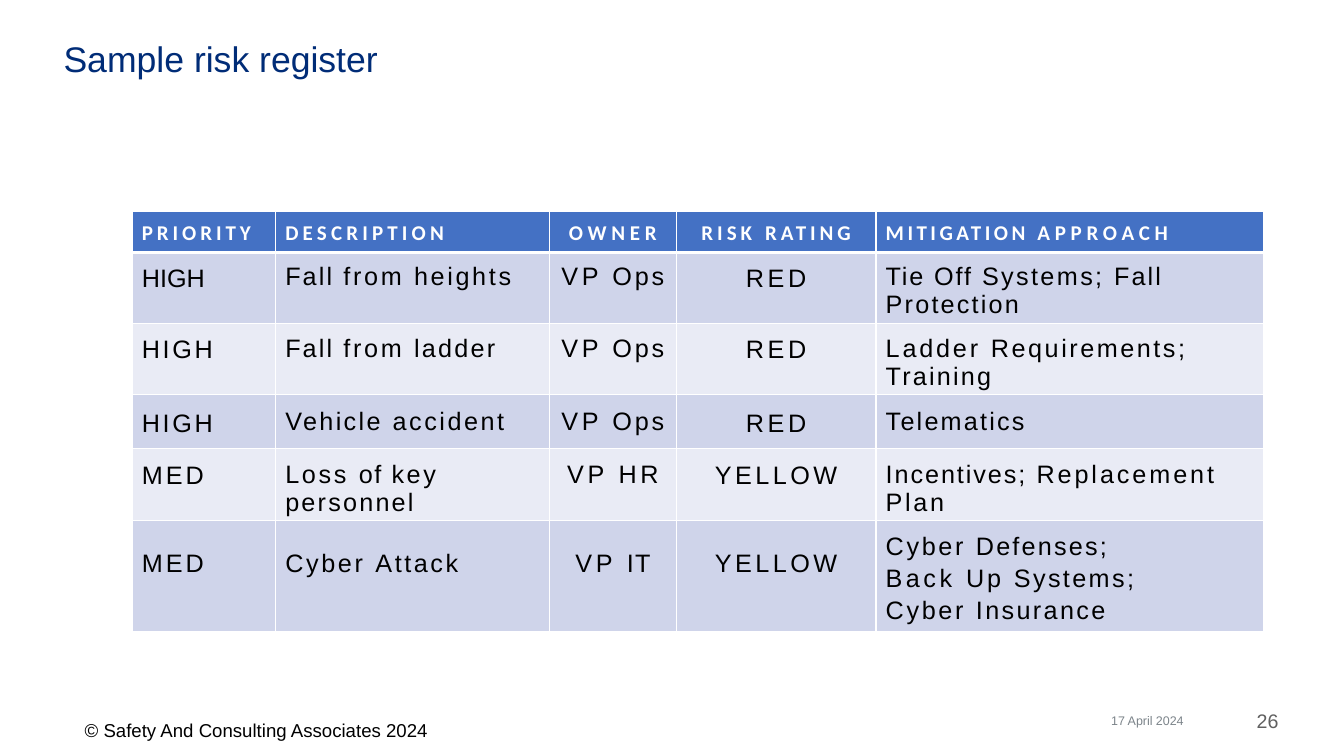
from dataclasses import dataclass

from pptx import Presentation
from pptx import util as u
from pptx.dml.color import RGBColor
from pptx.enum import text
from pptx.oxml import parse_xml
from pptx.oxml.ns import nsdecls

NAVY = RGBColor(0x00, 0x2C, 0x77)
BLUE = RGBColor(0x44, 0x71, 0xC4)
LAVENDER = RGBColor(0xCF, 0xD4, 0xEA)
PALE = RGBColor(0xE9, 0xEB, 0xF5)
WHITE = RGBColor(0xFF, 0xFF, 0xFF)
BLACK = RGBColor(0x00, 0x00, 0x00)
GREY = RGBColor(0x60, 0x60, 0x60)
SLATE = RGBColor(0x7C, 0x84, 0x8A)

SLIDE_W, SLIDE_H = u.Inches(13.33), u.Inches(7.5)
LEFT, CENTER, RIGHT = text.PP_ALIGN.LEFT, text.PP_ALIGN.CENTER, text.PP_ALIGN.RIGHT
TOP, BOTTOM = text.MSO_ANCHOR.TOP, text.MSO_ANCHOR.BOTTOM

Tracked = tuple[tuple[str, float], ...]  # pieces of text with their tracking in points


@dataclass(frozen=True)
class Box:
    """Place and size in percent of the slide's width and height."""
    left: float
    top: float
    width: float
    height: float


@dataclass(frozen=True)
class Style:
    size: float
    color: RGBColor
    font: str = "Arial"
    bold: bool = False
    align: text.PP_ALIGN = LEFT


@dataclass(frozen=True)
class Note:
    words: str
    box: Box
    style: Style
    anchor: text.MSO_ANCHOR = BOTTOM
    wrap: bool = True


@dataclass(frozen=True)
class Column:
    width: float
    align: text.PP_ALIGN = LEFT
    drop: float = 0  # extra points above the text


@dataclass(frozen=True)
class Row:
    """Height in percent of the slide, inset above the text in points."""
    height: float
    inset: float
    fill: RGBColor
    cells: tuple[Tracked, ...]


TITLE = Note("Sample risk register", Box(4.73, 5.6, 90.47, 11.07),
             Style(25.4, NAVY), TOP)
NOTES = (
    Note("© Safety And Consulting Associates 2024", Box(6.3, 95.07, 25.8, 2.93),
         Style(13.3, BLACK), TOP, False),
    Note("26", Box(88.9, 93.73, 6.23, 3.2), Style(14, GREY, align=RIGHT)),
    Note("17 April 2024", Box(82.67, 94.27, 10.73, 2), Style(8.9, SLATE)),
)
COLUMNS = (Column(10.67, LEFT, 1.2), Column(20.38), Column(9.45, CENTER),
           Column(14.85, CENTER, 1.2), Column(28.85))
HIGH, MED = (("HIGH", 1.9),), (("MED", 2.1),)
RED, YELLOW = (("RED", 2.6),), (("YELLOW", 2.5),)
VP_OPS = (("VP ", 2.6), ("Ops", 2))
HEADER = Row(5.41, 6, BLUE, (
    (("PRIORITY", 2.8),), (("DESCRIPTION", 3),), (("OWNER", 3.4),),
    (("RISK ", 2.9), ("RATING", 2.8)), (("MITIGATION ", 2.5), ("APPROACH", 3.4))))
RISKS = (
    Row(9.38, 7.3, LAVENDER, (
        (("HIGH", 0),), (("Fall ", 1.5), ("from heights", 1.9)), VP_OPS, RED,
        (("Tie ", 1.3), ("Off ", 1.4), ("Systems; ", 1.7), ("Fall ", 1.5),
         ("Protection", 1.6)))),
    Row(9.43, 7.8, PALE, (
        HIGH, (("Fall ", 1.5), ("from ", 1.9), ("ladder", 1.6)), VP_OPS, RED,
        (("Ladder ", 2), ("Requirements; ", 1.8), ("Training", 1.6)))),
    Row(7.07, 9.4, LAVENDER, (
        HIGH, (("Vehicle ", 1.7), ("accident", 1.8)), VP_OPS, RED,
        (("Telematics", 1.6),))),
    Row(9.6, 8.8, PALE, (
        MED, (("Loss ", 1.9), ("of ", 1.1), ("key ", 1.9), ("personnel", 1.6)),
        (("VP ", 2.7), ("HR", 2.6)), YELLOW,
        (("Incentives; ", 1.4), ("Replacement ", 2.1), ("Plan", 1.9)))),
    Row(14.67, 20.9, LAVENDER, (
        MED, (("Cyber ", 1.9), ("Attack", 1.8)), (("VP ", 2.7), ("IT", 0.9)), YELLOW,
        (("Cyber ", 1.9), ("Defenses; ", 1.6), ("Back ", 2.5), ("Up ", 2),
         ("Systems; ", 1.7), ("Cyber ", 1.9), ("Insurance", 1.7)))),
)
ROWS = (HEADER, *RISKS)


def across(percent: float) -> int:
    return round(SLIDE_W * percent / 100)


def down(percent: float) -> int:
    return round(SLIDE_H * percent / 100)


def frame(box: Box) -> tuple[int, int, int, int]:
    return across(box.left), down(box.top), across(box.width), down(box.height)


def write(p, pieces: Tracked, style: Style) -> None:
    p.alignment = style.align
    for words, tracking in pieces:
        r = p.add_run()
        r.text = words
        r.font.name, r.font.size, r.font.bold = style.font, u.Pt(style.size), style.bold
        r.font.color.rgb = style.color
        if tracking:
            r.font._element.set("spc", str(round(tracking * 100)))


def fill_note(sp, note: Note) -> None:
    sp.left, sp.top, sp.width, sp.height = frame(note.box)
    tf = sp.text_frame
    tf.margin_left = tf.margin_top = tf.margin_right = tf.margin_bottom = 0
    tf.auto_size = text.MSO_AUTO_SIZE.NONE
    tf.word_wrap, tf.vertical_anchor = note.wrap, note.anchor
    write(tf.paragraphs[0], ((note.words, 0),), note.style)


def set_borders(cell, top: float, bottom: float) -> None:
    """Draw white rules round a cell; they must come before its fill."""
    tc_pr = cell._tc.get_or_add_tcPr()
    for side, width in (("L", 1), ("R", 1), ("T", top), ("B", bottom)):
        tc_pr.append(parse_xml(
            f'<a:ln{side} {nsdecls("a")} w="{u.Pt(width)}"><a:solidFill>'
            f'<a:srgbClr val="{WHITE}"/></a:solidFill></a:ln{side}>'))


def add_register(s) -> None:
    box = Box(9.83, 28, sum(c.width for c in COLUMNS), sum(r.height for r in ROWS))
    table = s.shapes.add_table(len(ROWS), len(COLUMNS), *frame(box)).table
    for j, column in enumerate(COLUMNS):
        table.columns[j].width = across(column.width)
    for i, row in enumerate(ROWS):
        table.rows[i].height = down(row.height)
        for j, column in enumerate(COLUMNS):
            cell = table.cell(i, j)
            set_borders(cell, 3 if i == 1 else 1, 3 if i == 0 else 1)
            cell.fill.solid()
            cell.fill.fore_color.rgb = row.fill
            cell.margin_left = across(0.73) if column.align == LEFT else 0
            cell.margin_right = cell.margin_bottom = 0
            drop = column.drop if 0 < i < len(RISKS) else 0
            cell.margin_top = u.Pt(row.inset + drop)
            style = (Style(15, WHITE, "Calibri", True, column.align) if i == 0
                     else Style(18, BLACK, align=column.align))
            write(cell.text_frame.paragraphs[0], row.cells[j], style)
    # The last mitigation stacks its three measures, one to a line.
    measures = table.cell(len(RISKS), len(COLUMNS) - 1)
    measures.margin_top, measures.margin_right = u.Pt(5.5), across(7.9)
    measures.text_frame.paragraphs[0].line_spacing = 1.14


def main() -> None:
    prs = Presentation()
    prs.slide_width, prs.slide_height = SLIDE_W, SLIDE_H
    s = prs.slides.add_slide(prs.slide_layouts[5])
    title = s.shapes.title
    fill_note(title, TITLE)
    p = title.text_frame.paragraphs[0]
    p.line_spacing, p.space_after = 0.88, u.Pt(6)
    add_register(s)
    for note in NOTES:
        fill_note(s.shapes.add_textbox(*frame(note.box)), note)
    prs.save("out.pptx")


if __name__ == "__main__":
    main()
